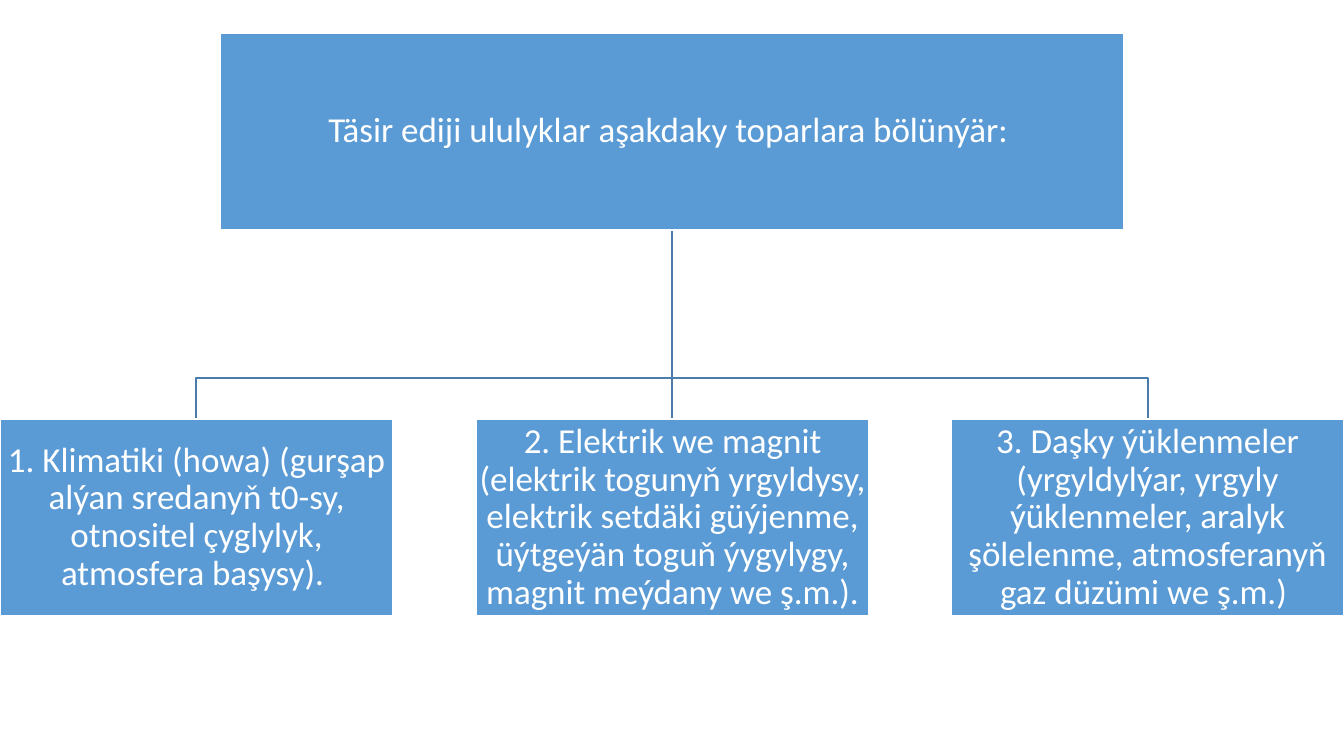
from pptx import Presentation
from pptx.dml.color import RGBColor
from pptx.enum.shapes import MSO_CONNECTOR, MSO_SHAPE
from pptx.enum.text import MSO_ANCHOR, PP_ALIGN
from pptx.oxml.ns import qn
from pptx.util import Emu, Pt
from lxml import etree

SCALE = 914400 / 100.8
COLORS = {"box": "5B9BD5", "line": "497CAB", "white": "FFFFFF"}
ROOT = "Täsir ediji ululyklar aşakdaky toparlara bölünýär: "
GROUPS = [
    "1. Klimatiki (howa) (gurşap alýan sredanyň t0-sy, otnositel çyglylyk, "
    "atmosfera başysy). ",
    "2. Elektrik we magnit (elektrik togunyň yrgyldysy, elektrik setdäki "
    "güýjenme, üýtgeýän toguň ýygylygy, magnit meýdany we ş.m.).",
    "3. Daşky ýüklenmeler (yrgyldylýar, yrgyly ýüklenmeler, aralyk şölelenme, "
    "atmosferanyň gaz düzümi we ş.m.) ",
]


def px(n):
    return Emu(round(n * SCALE))


def color(name):
    return RGBColor.from_string(COLORS[name])


def style_line(s, name):
    s.line.color.rgb = color(name)
    s.line.width = Pt(1)


def add_box(slide, text, x, y, w, h):
    s = slide.shapes.add_shape(MSO_SHAPE.RECTANGLE, px(x), px(y), px(w), px(h))
    s.shadow.inherit = False
    s.fill.solid()
    s.fill.fore_color.rgb = color("box")
    style_line(s, "white")
    tf = s.text_frame
    tf.word_wrap = True
    tf.vertical_anchor = MSO_ANCHOR.MIDDLE
    tf.margin_left = tf.margin_right = tf.margin_top = tf.margin_bottom = px(2)
    tf.text = text
    p = tf.paragraphs[0]
    p.alignment = PP_ALIGN.CENTER
    p.line_spacing = 0.9
    font = p.runs[0].font
    font.name = "Calibri"
    font.size = Pt(25)
    font.color.rgb = color("white")


def add_branch(slide, x1, y1, x2, y2, bend):
    """Draw a line from a parent to a child, turning at height bend."""
    if x1 == x2:
        s = slide.shapes.add_connector(
            MSO_CONNECTOR.STRAIGHT, px(x1), px(y1), px(x2), px(y2))
        etree.SubElement(s._element.spPr, qn("a:effectLst"))
    else:
        builder = slide.shapes.build_freeform(x1, y1, scale=SCALE)
        builder.add_line_segments([(x1, bend), (x2, bend), (x2, y2)], close=False)
        s = builder.convert_to_shape()
        s.shadow.inherit = False
        s.fill.background()
    style_line(s, "line")


def add_tree(slide, x, y, w, h):
    """Place one root box above a row of evenly spaced group boxes."""
    root_w, group_w, box_h = 904, 393, 197
    mid, root_bottom, row_y = x + w // 2, y + box_h, y + h - box_h
    step = (w - group_w) / (len(GROUPS) - 1)
    lefts = [x + round(i * step) for i in range(len(GROUPS))]
    for i in range(len(GROUPS)):
        center = mid + round((i - (len(GROUPS) - 1) / 2) * step)
        add_branch(slide, mid, root_bottom, center, row_y, row_y - 41)
    add_box(slide, ROOT, mid - root_w // 2, y, root_w, box_h)
    for left, text in zip(lefts, GROUPS):
        add_box(slide, text, left, row_y, group_w, box_h)


def main():
    prs = Presentation()
    prs.slide_width, prs.slide_height = px(1344), px(756)
    slide = prs.slides.add_slide(prs.slide_layouts[6])
    add_tree(slide, 0, 33, 1344, 583)
    prs.save("out.pptx")


if __name__ == "__main__":
    main()
